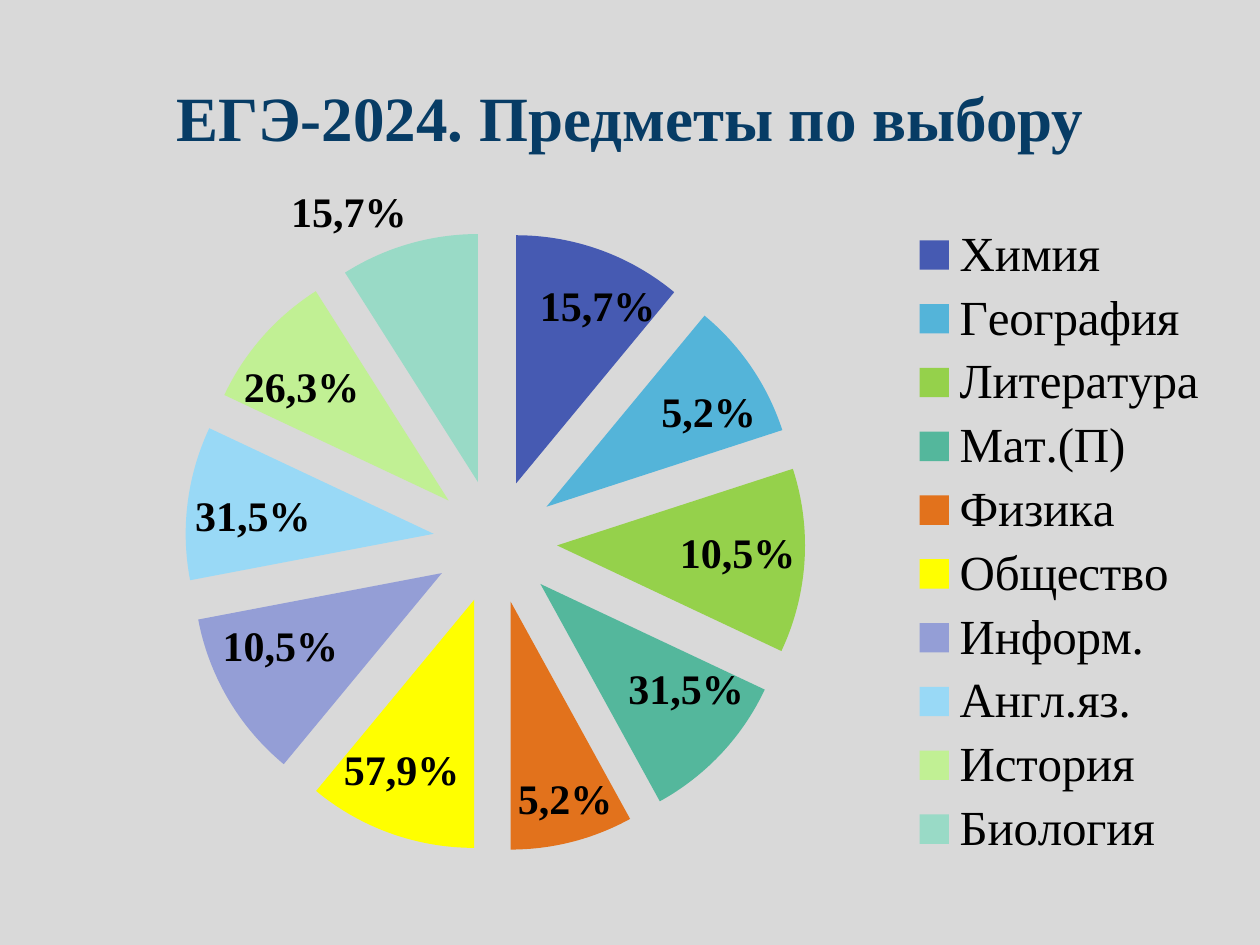
import pptx
import pptx.chart.data
import pptx.dml.color
import pptx.enum.chart
import pptx.enum.text
import pptx.oxml
import pptx.oxml.ns
import pptx.util

Pt = pptx.util.Pt
LabelPosition = pptx.enum.chart.XL_LABEL_POSITION

# Subject, share of the pie, label, slice colour, label shift in points
# (a label without a shift stands outside its slice)
SUBJECTS = [
    ("Химия", 11, "15,7%", "465AB2", (33, 15)),
    ("География", 9, "5,2%", "54B4D9", (6, 10)),
    ("Литература", 12, "10,5%", "95D14B", (-1, -4)),
    ("Мат.(П)", 10, "31,5%", "54B79C", (16, -20)),
    ("Физика", 8, "5,2%", "E2721C", (24, -6)),
    ("Общество", 11, "57,9%", "FFFF00", (-28, -18)),
    ("Информ.", 11, "10,5%", "949ED6", (-7, -14)),
    ("Англ.яз.", 10, "31,5%", "99D9F6", (0, -6)),
    ("История", 9, "26,3%", "C1F094", (-14, 13)),
    ("Биология", 9, "15,7%", "99DAC6", None),
]


def color(hex_text):
    return pptx.dml.color.RGBColor.from_string(hex_text)


def format_font(font, size, fill="000000", bold=False, name="Times New Roman"):
    font.name = name
    font.size = Pt(size)
    font.bold = bold
    font.color.rgb = color(fill)


def write_text(text_frame, text, align=None, **font_format):
    paragraph = text_frame.paragraphs[0]
    paragraph.alignment = align
    run = paragraph.add_run()
    run.text = text
    format_font(run.font, **font_format)


def set_layout(parent, predecessor, **values):
    """Replace the parent's layout; values are fractions of the chart's size."""
    for old_layout in parent.findall(pptx.oxml.ns.qn("c:layout")):
        parent.remove(old_layout)
    settings = "".join(f'<c:{tag} val="{value}"/>' for tag, value in values.items())
    layout = pptx.oxml.parse_xml(
        f'<c:layout {pptx.oxml.ns.nsdecls("c")}>'
        f"<c:manualLayout>{settings}</c:manualLayout></c:layout>"
    )
    if predecessor is None:
        parent.insert(0, layout)
    else:
        parent.find(pptx.oxml.ns.qn(predecessor)).addnext(layout)


class SlideBuilder:
    def __init__(self, presentation, background):
        self.title_color = "073C65"
        self.title_size = 36
        self.label_size = 24
        self.legend_size = 28
        self.slide = presentation.slides.add_slide(presentation.slide_layouts[5])
        fill = self.slide.background.fill
        fill.solid()
        fill.fore_color.rgb = color(background)

    def title(self, text, left, top, width, height):
        shape = self.slide.shapes.title
        shape.left, shape.top = Pt(left), Pt(top)
        shape.width, shape.height = Pt(width), Pt(height)
        shape.text_frame.vertical_anchor = pptx.enum.text.MSO_ANCHOR.MIDDLE
        write_text(shape.text_frame, text, align=pptx.enum.text.PP_ALIGN.CENTER,
                   size=self.title_size, fill=self.title_color, bold=True)

    def pie(self, subjects, left, top, width, height):
        data = pptx.chart.data.CategoryChartData()
        data.categories = [name for name, *_ in subjects]
        data.add_series("Series 1", [share for _, share, *_ in subjects])
        chart = self.slide.shapes.add_chart(
            pptx.enum.chart.XL_CHART_TYPE.PIE_EXPLODED,
            Pt(left), Pt(top), Pt(width), Pt(height), data).chart
        chart.has_title = False
        format_font(chart.font, size=10)
        plot = chart.plots[0]
        plot.vary_by_categories = True

        # Slices and their labels
        series = plot.series[0]
        for index, (_, _, label_text, fill, shift) in enumerate(subjects):
            point = series.points[index]
            point.format.fill.solid()
            point.format.fill.fore_color.rgb = color(fill)
            point.format.line.fill.background()
            label = point.data_label
            write_text(label.text_frame, label_text, size=self.label_size, bold=True)
            if shift is None:
                label.position = LabelPosition.OUTSIDE_END
                continue
            label.position = LabelPosition.INSIDE_END
            label_element = series._element.dLbls.get_dLbl_for_point(index)
            set_layout(label_element, "c:idx",
                       x=round(shift[0] / width, 4), y=round(shift[1] / height, 4))
        series._element.find(pptx.oxml.ns.qn("c:explosion")).set("val", "25")

        # Place of the pie
        set_layout(chart._chartSpace.chart.plotArea, None, layoutTarget="inner",
                   xMode="edge", yMode="edge", x=0.126, y=0.088, w=0.521, h=0.823)
        self.legend(chart)

    def legend(self, chart):
        chart.has_legend = True
        legend = chart.legend
        legend.position = pptx.enum.chart.XL_LEGEND_POSITION.RIGHT
        legend.include_in_layout = False
        format_font(legend.font, size=self.legend_size)
        set_layout(legend._element, "c:legendPos",
                   xMode="edge", yMode="edge", x=0.73, y=0.07, w=0.26, h=0.86)


def main():
    presentation = pptx.Presentation()
    presentation.slide_width, presentation.slide_height = Pt(720), Pt(540)
    builder = SlideBuilder(presentation, background="D9D9D9")
    builder.title("ЕГЭ-2024. Предметы по выбору", 36, 21.6, 648, 90)
    builder.pie(SUBJECTS, 20, 94.5, 680.5, 430.5)
    presentation.save("out.pptx")


if __name__ == "__main__":
    main()
